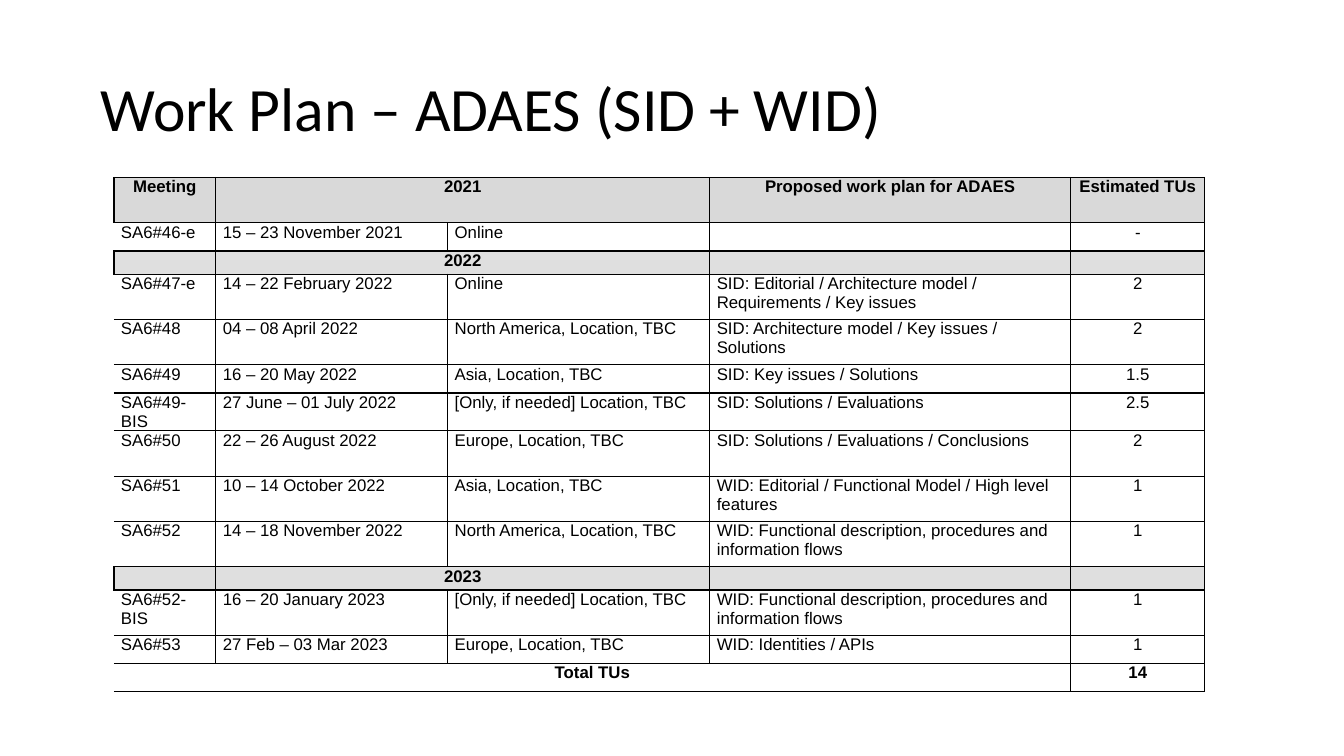
from lxml import etree
from pptx import Presentation, util as u
from pptx.dml.color import RGBColor
from pptx.enum import text
from pptx.oxml import ns

BLACK, WHITE, HEAD, YEAR = "000000", "FFFFFF", "D9D9D9", "DFDFDF"
COLS = [1.01, 2.3, 2.6, 3.58, 1.33]
TALL, SHORT, BAND = 0.45, 0.28, 0.23

# Row height, fill, bold, merged columns (first, last), cell texts
PLAIN = (WHITE, False, None)
YEAR_BAND = (BAND, YEAR, True, (1, 2))
ROWS = [
    (TALL, HEAD, True, (1, 2),
     ["Meeting", "2021", "", "Proposed work plan for ADAES", "Estimated TUs"]),
    (SHORT, *PLAIN, ["SA6#46-e", "15 – 23 November 2021", "Online", "", "-"]),
    (*YEAR_BAND, ["", "2022", "", "", ""]),
    (TALL, *PLAIN, ["SA6#47-e", "14 – 22 February 2022", "Online",
                    "SID: Editorial / Architecture model / Requirements / Key issues", "2"]),
    (TALL, *PLAIN, ["SA6#48", "04 – 08 April 2022", "North America, Location, TBC",
                    "SID: Architecture model / Key issues / Solutions", "2"]),
    (SHORT, *PLAIN, ["SA6#49", "16 – 20 May 2022", "Asia, Location, TBC",
                     "SID: Key issues / Solutions", "1.5"]),
    (SHORT, *PLAIN, ["SA6#49-BIS", "27 June – 01 July 2022", "[Only, if needed] Location, TBC",
                     "SID: Solutions / Evaluations", "2.5"]),
    (TALL, *PLAIN, ["SA6#50", "22 – 26 August 2022", "Europe, Location, TBC",
                    "SID: Solutions / Evaluations / Conclusions", "2"]),
    (TALL, *PLAIN, ["SA6#51", "10 – 14 October 2022", "Asia, Location, TBC",
                    "WID: Editorial / Functional Model / High level features", "1"]),
    (TALL, *PLAIN, ["SA6#52", "14 – 18 November 2022", "North America, Location, TBC",
                    "WID: Functional description, procedures and information flows", "1"]),
    (*YEAR_BAND, ["", "2023", "", "", ""]),
    (TALL, *PLAIN, ["SA6#52-BIS", "16 – 20 January 2023", "[Only, if needed] Location, TBC",
                    "WID: Functional description, procedures and information flows", "1"]),
    (SHORT, *PLAIN, ["SA6#53", "27 Feb – 03 Mar 2023", "Europe, Location, TBC",
                     "WID: Identities / APIs", "1"]),
    (SHORT, WHITE, True, (0, 3), ["Total TUs", "", "", "", "14"]),
]


def color(value):
    return RGBColor.from_string(value)


def add_run(p, words, font, size, bold=False):
    r = p.add_run()
    r.text = words
    r.font.name, r.font.size, r.font.bold = font, u.Pt(size), bold
    r.font.color.rgb = color(BLACK)


def add_title(s, words):
    sp = s.shapes.title
    sp.left, sp.top, sp.width, sp.height = map(u.Inches, (0.9, 0.38, 11.5, 1.45))
    tf = sp.text_frame
    tf.word_wrap = True
    tf.vertical_anchor = text.MSO_ANCHOR.MIDDLE
    p = tf.paragraphs[0]
    p.alignment = text.PP_ALIGN.LEFT
    p.line_spacing = 0.9
    add_run(p, words, "Calibri", 44)


def set_borders(cell, open_left):
    tc_pr = cell._tc.get_or_add_tcPr()
    for side in "LRTB":
        ln = etree.SubElement(tc_pr, ns.qn(f"a:ln{side}"), w=str(u.Pt(1)))
        if side == "L" and open_left:
            etree.SubElement(ln, ns.qn("a:noFill"))
        else:
            fill = etree.SubElement(ln, ns.qn("a:solidFill"))
            etree.SubElement(fill, ns.qn("a:srgbClr"), val=BLACK)


def fill_cell(cell, words, fill, bold, centred, open_left):
    set_borders(cell, open_left)
    cell.fill.solid()
    cell.fill.fore_color.rgb = color(fill)
    cell.margin_left = cell.margin_right = u.Inches(0.07)
    cell.margin_top = cell.margin_bottom = 0
    p = cell.text_frame.paragraphs[0]
    p.space_before = p.space_after = u.Pt(1)
    p.alignment = text.PP_ALIGN.CENTER if centred else text.PP_ALIGN.LEFT
    if words:
        add_run(p, words, "Arial", 12, bold)
    else:
        p._p.get_or_add_endParaRPr().set("sz", "1200")


def add_plan(s):
    heights = [row[0] for row in ROWS]
    frame = s.shapes.add_table(len(ROWS), len(COLS), u.Inches(1.13), u.Inches(1.76),
                               u.Inches(sum(COLS)), u.Inches(sum(heights)))
    table = frame.table
    table.first_row = table.horz_banding = False
    for column, width in zip(table.columns, COLS):
        column.width = u.Inches(width)
    for i, (height, fill, bold, merged, words) in enumerate(ROWS):
        table.rows[i].height = u.Inches(height)
        for j, value in enumerate(words):
            centred = bold or j == len(COLS) - 1
            fill_cell(table.cell(i, j), value, fill, bold, centred,
                      open_left=j == 0 and fill == WHITE)
        if merged:
            first, last = merged
            table.cell(i, first).merge(table.cell(i, last))


def main():
    prs = Presentation()
    prs.slide_width, prs.slide_height = u.Inches(13.33), u.Inches(7.5)
    s = prs.slides.add_slide(prs.slide_layouts[5])
    add_title(s, "Work Plan – ADAES (SID + WID)")
    add_plan(s)
    prs.save("out.pptx")


if __name__ == "__main__":
    main()
